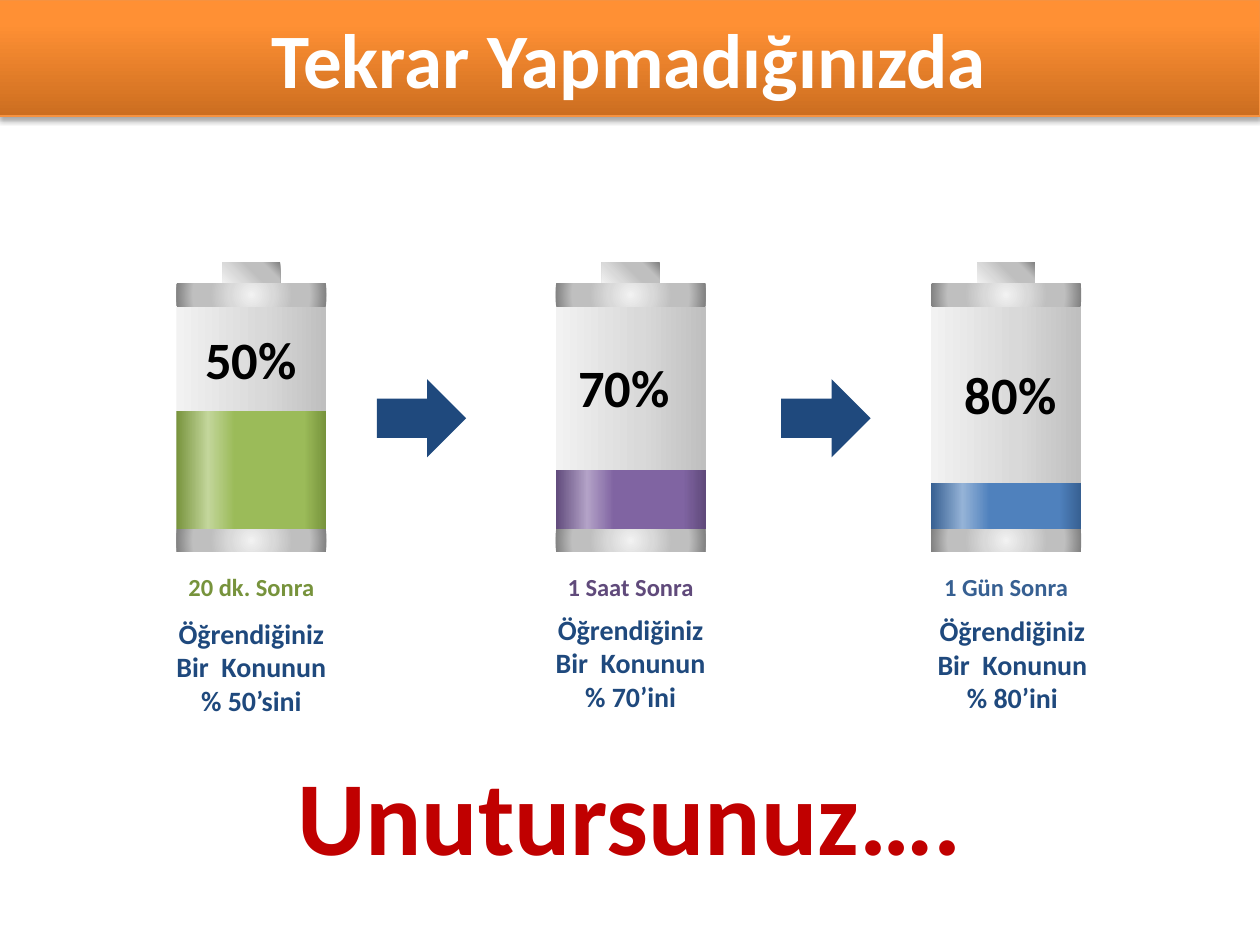
from pptx import Presentation
from pptx.dml.color import RGBColor
from pptx.enum.shapes import MSO_SHAPE as SHAPE
from pptx.enum.text import MSO_ANCHOR, MSO_AUTO_SIZE, PP_ALIGN
from pptx.oxml import parse_xml
from pptx.oxml.ns import nsdecls, qn
from pptx.util import Inches, Pt

# Content
TITLE = "Tekrar Yapmadığınızda"
CLOSING = "Unutursunuz…."
GREEN, PURPLE, BLUE = (RGBColor.from_string(c) for c in ("77933C", "604A7B", "376092"))
# left, charge height, dark, light, main, percent and its place, time, text and its place
BATTERIES = [
    (1.4, 0.94, GREEN, "C3D69B", "9BBB59", "50%", (1.53, 2.55),
     "20 dk. Sonra", "Öğrendiğiniz Bir  Konunun % 50’sini", (1.24, 4.84)),
    (4.41, 0.47, PURPLE, "B3A2C7", "8064A2", "70%", (4.49, 2.77),
     "1 Saat Sonra", "Öğrendiğiniz Bir  Konunun % 70’ini", (4.25, 4.81)),
    (7.39, 0.37, BLUE, "95B3D7", "4F81BD", "80%", (7.56, 2.82),
     "1 Gün Sonra", "Öğrendiğiniz Bir  Konunun % 80’ini", (7.28, 4.82)),
]
ARROWS = [2.99, 6.2]

# Colours
WHITE = RGBColor(0xFF, 0xFF, 0xFF)
BLACK = RGBColor(0, 0, 0)
NAVY = RGBColor(0x1F, 0x49, 0x7D)
RED = RGBColor(0xC0, 0, 0)
ORANGE = RGBColor(0xF6, 0x92, 0x40)
BANNER = [(0, "CC6E20"), (80, "FF9034"), (100, "FF9136")]
CASE = [(0, "F2F2F2"), (57, "D9D9D9"), (100, "BFBFBF")]
METAL = [(0, "F2F2F2"), (29, "D9D9D9"), (55, "BFBFBF"), (77, "BFBFBF"), (100, "808080")]

# Battery measures
WIDTH, TOP, HEIGHT, BAND = 1.19, 2.25, 2.13, 0.18
KNOB_W, KNOB_H = 0.46, 0.17
CHARGE_BOTTOM = TOP + HEIGHT - BAND


def linear(angle):
    return f'<a:lin ang="{angle * 60000}" scaled="0"/>'


def radial(l, t, r, b):
    return (f'<a:path path="circle"><a:fillToRect l="{l}000" t="{t}000" '
            f'r="{r}000" b="{b}000"/></a:path>')


def fill_gradient(sp, stops, direction):
    gs = "".join(f'<a:gs pos="{pos * 1000}"><a:srgbClr val="{c}"/></a:gs>' for pos, c in stops)
    sp.fill.background()
    spPr = sp._element.spPr
    spPr.replace(spPr.find(qn("a:noFill")), parse_xml(
        f'<a:gradFill {nsdecls("a")} rotWithShape="1"><a:gsLst>{gs}</a:gsLst>{direction}</a:gradFill>'))


def add_plain(shapes, kind, x, y, w, h):
    sp = shapes.add_shape(kind, Inches(x), Inches(y), Inches(w), Inches(h))
    sp.shadow.inherit = False
    sp.line.fill.background()
    return sp


def add_block(shapes, x, y, w, h, stops, direction):
    fill_gradient(add_plain(shapes, SHAPE.RECTANGLE, x, y, w, h), stops, direction)


def write(tf, text, size, color, align):
    tf.text = text
    p = tf.paragraphs[0]
    p.alignment = align
    font = p.runs[0].font
    font.name, font.size, font.bold = "Calibri", Pt(size), True
    font.color.rgb = color


def add_text(x, y, w, h, text, size, color, align=PP_ALIGN.CENTER, wrap=False):
    tf = s.shapes.add_textbox(Inches(x), Inches(y), Inches(w), Inches(h)).text_frame
    tf.word_wrap = wrap
    tf.auto_size = MSO_AUTO_SIZE.SHAPE_TO_FIT_TEXT
    write(tf, text, size, color, align)


prs = Presentation()
prs.slide_width, prs.slide_height = Inches(10), Inches(7.5)
s = prs.slides.add_slide(prs.slide_layouts[5])

# Title banner
title = s.shapes.title
title.left, title.top, title.width, title.height = Inches(-0.01), 0, Inches(10.01), Inches(0.92)
fill_gradient(title, BANNER, linear(270))
title.line.color.rgb = ORANGE
title.line.width = Pt(0.75)
title._element.spPr.append(parse_xml(
    f'<a:effectLst {nsdecls("a")}><a:outerShdw blurRad="40000" dist="23000" dir="5400000" '
    'rotWithShape="0"><a:srgbClr val="000000"><a:alpha val="35000"/></a:srgbClr>'
    '</a:outerShdw></a:effectLst>'))
title.text_frame.vertical_anchor = MSO_ANCHOR.MIDDLE
write(title.text_frame, TITLE, 44, WHITE, PP_ALIGN.CENTER)

# Batteries with their captions
for x, charge, dark, light, main, percent, percent_at, time, text, text_at in BATTERIES:
    case = s.shapes.add_group_shape().shapes
    add_block(case, x, TOP, WIDTH, HEIGHT, CASE, linear(0))
    add_block(case, x + (WIDTH - KNOB_W) / 2, TOP - KNOB_H, KNOB_W, KNOB_H,
              METAL, radial(0, 100, 100, 0))
    for y in (TOP, CHARGE_BOTTOM):
        add_block(case, x, y, WIDTH, BAND, METAL, radial(50, 50, 50, 50))
    stops = [(0, dark), (21, light), (39, main), (85, main), (100, dark)]
    add_block(s.shapes, x, CHARGE_BOTTOM - charge, WIDTH, charge, stops, linear(0))
    add_text(*percent_at, 0.94, 0.61, percent, 30, BLACK, PP_ALIGN.LEFT)
    add_text(x - 0.01, 4.49, 1.21, 0.34, time, 14, dark)
    add_text(*text_at, 1.51, 0.91, text, 16, NAVY, wrap=True)

# Arrows between the batteries
for x in ARROWS:
    arrow = add_plain(s.shapes, SHAPE.RIGHT_ARROW, x, 3.01, 0.71, 0.62)
    arrow.fill.solid()
    arrow.fill.fore_color.rgb = NAVY

# Closing word
add_text(2.26, 5.91, 6.89, 1.11, CLOSING, 60, RED, PP_ALIGN.LEFT, wrap=True)

prs.save("out.pptx")
